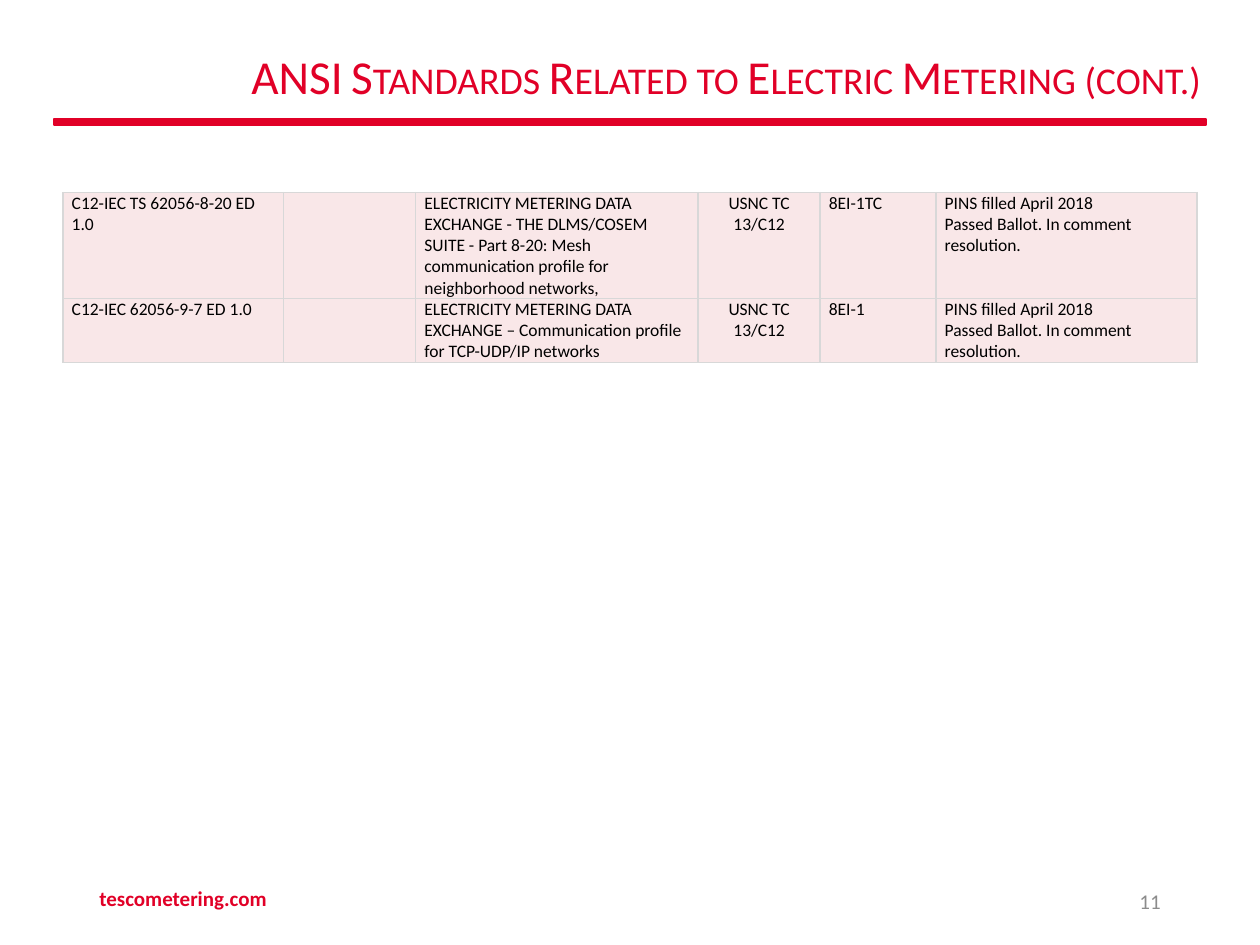
from lxml.etree import SubElement as Sub
from pptx import Presentation
from pptx.dml.color import RGBColor as Rgb
from pptx.enum.shapes import MSO_SHAPE as Kind
from pptx.enum.text import MSO_ANCHOR as Anchor, PP_ALIGN as Align
from pptx.oxml.ns import qn
from pptx.util import Pt

HUES = {"red": "E10027", "pink": "F9E7E8", "edge": "D8D8D8",
        "gray": "8C8C8C", "ink": "000000"}
COLS = [126, 75.6, 161.3, 69.8, 66.2, 149.1]
STATE = "PINS filled April 2018\nPassed Ballot. In comment resolution."
GROUP = "USNC TC 13/C12"
SUITE = "ELECTRICITY METERING DATA EXCHANGE"
ROWS = [
    (46, ["C12-IEC TS 62056-8-20 ED 1.0", "",
          SUITE + " - THE DLMS/COSEM SUITE - Part 8-20: Mesh "
          "communication profile for neighborhood networks,",
          GROUP, "8EI-1TC", STATE]),
    (34.5, ["C12-IEC 62056-9-7 ED 1.0", "",
            SUITE + " – Communication profile for TCP-UDP/IP networks",
            GROUP, "8EI-1", STATE]),
]


class Deck:
    face = "Calibri"

    def __init__(self):
        self.show = Presentation()
        self.show.slide_width, self.show.slide_height = Pt(720), Pt(540)
        self.slide = self.show.slides.add_slide(self.show.slide_layouts[5])

    def hue(self, name):
        return Rgb.from_string(HUES[name])

    def paint(self, fill, name):
        fill.solid()
        fill.fore_color.rgb = self.hue(name)

    def put(self, frame, text, size, hue, align=Align.LEFT, bold=False):
        frame.word_wrap = True
        frame.text = text
        for para in frame.paragraphs:
            para.alignment = align
            font = para.font
            font.name, font.size, font.bold = self.face, Pt(size), bold
            font.color.rgb = self.hue(hue)

    def title(self, text, x, y, w, h):
        box = self.slide.shapes.title
        box.left, box.top, box.width, box.height = map(Pt, (x, y, w, h))
        frame = box.text_frame
        self.put(frame, text, 27, "red", Align.RIGHT)
        frame.vertical_anchor = Anchor.MIDDLE
        para = frame.paragraphs[0]
        para.line_spacing = 0.9
        para.runs[0]._r.get_or_add_rPr().set("cap", "small")

    def bar(self, x, y, w, h):
        box = self.slide.shapes.add_shape(Kind.RECTANGLE, *map(Pt, (x, y, w, h)))
        box.shadow.inherit = False
        self.paint(box.fill, "red")
        self.paint(box.line.fill, "red")
        box.line.width = Pt(1)

    def label(self, text, x, y, w, h, hue, **look):
        box = self.slide.shapes.add_textbox(*map(Pt, (x, y, w, h)))
        self.put(box.text_frame, text, 12, hue, **look)
        box.text_frame.vertical_anchor = Anchor.MIDDLE

    def edge(self, cell):
        props = cell._tc.get_or_add_tcPr()
        for side in ("lnL", "lnR", "lnT", "lnB"):
            line = Sub(props, qn("a:" + side), w=str(Pt(1)))
            fill = Sub(line, qn("a:solidFill"))
            Sub(fill, qn("a:srgbClr"), val=HUES["edge"])

    def table(self, x, y, cols, rows):
        high = sum(tall for tall, _ in rows)
        grid = self.slide.shapes.add_table(
            len(rows), len(cols), Pt(x), Pt(y), Pt(sum(cols)), Pt(high)).table
        grid.first_row = grid.horz_banding = False
        for col, wide in zip(grid.columns, cols):
            col.width = Pt(wide)
        for row, (tall, texts) in zip(grid.rows, rows):
            row.height = Pt(tall)
            for cell, text in zip(row.cells, texts):
                cell.margin_left = cell.margin_right = Pt(5)
                cell.margin_top = cell.margin_bottom = 0
                self.edge(cell)
                self.paint(cell.fill, "pink")
                align = Align.CENTER if text == GROUP else Align.LEFT
                self.put(cell.text_frame, text, 10, "ink", align)


def main():
    deck = Deck()
    deck.bar(31, 67.9, 658, 3.6)
    deck.table(36, 110, COLS, ROWS)
    deck.label("tescometering.com", 49.7, 499, 243.4, 28.8, "red", bold=True)
    deck.label("11", 508.3, 500.4, 162, 28.8, "gray", align=Align.RIGHT)
    deck.title("ANSI Standards Related to Electric Metering (cont.)",
               90, 18.7, 603.4, 53.3)
    deck.show.save("out.pptx")


if __name__ == "__main__":
    main()
